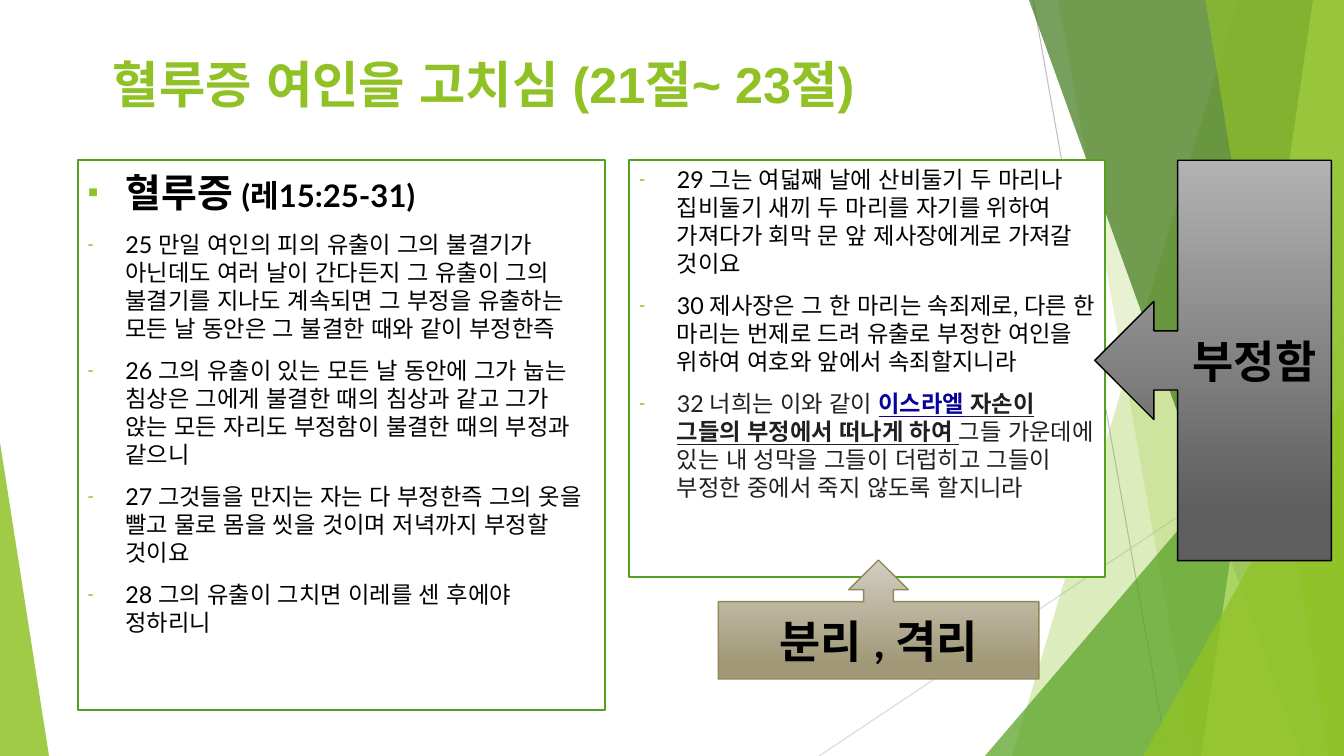
from lxml import etree
from pptx import Presentation
from pptx.dml.color import RGBColor
from pptx.enum import lang, shapes, text
from pptx.oxml.ns import qn
from pptx.util import Pt

LIME = RGBColor(0x90, 0xC2, 0x26)
GREEN = RGBColor(0x54, 0xA0, 0x21)
DARK_GREEN = RGBColor(0x3F, 0x78, 0x19)
PALE_LIME = RGBColor(0xC0, 0xE4, 0x74)
GREY = RGBColor(0xBF, 0xBF, 0xBF)
LIGHT_GREY = RGBColor(0xD9, 0xD9, 0xD9)
WHITE = RGBColor(0xFF, 0xFF, 0xFF)
BLACK = RGBColor(0, 0, 0)
INK = RGBColor(0x20, 0x20, 0x20)
NAVY = RGBColor(0x07, 0x00, 0x9A)
SILVER = RGBColor(0xB2, 0xB2, 0xB2)
CHARCOAL = RGBColor(0x5E, 0x5E, 0x5E)
SAND = RGBColor(0xD1, 0xCD, 0xC0)
KHAKI = RGBColor(0xA1, 0x98, 0x77)
BROWN = RGBColor(0x91, 0x86, 0x55)
WIDTH, HEIGHT = 960, 540
KOREAN_FONT = "Noto Sans CJK KR"


def add_text(paragraph, words, size=16.6, color=BLACK, bold=False, underline=False, latin="Lato"):
    run = paragraph.add_run()
    run.text = words
    font = run.font
    font.size, font.bold, font.underline, font.name = Pt(size), bold, underline, latin
    font.color.rgb = color
    font.language_id = lang.MSO_LANGUAGE_ID.KOREAN
    east_asian = etree.SubElement(run._r.get_or_add_rPr(), qn("a:ea"))
    east_asian.set("typeface", KOREAN_FONT)


def add_bullet(paragraph, mark):
    properties = paragraph._p.get_or_add_pPr()
    properties.set("marL", str(Pt(27)))
    properties.set("indent", str(-Pt(27)))
    color = etree.SubElement(properties, qn("a:buClr"))
    etree.SubElement(color, qn("a:srgbClr")).set("val", str(LIME))
    etree.SubElement(properties, qn("a:buSzPct")).set("val", "80000")
    etree.SubElement(properties, qn("a:buFont")).set("typeface", "Arial")
    etree.SubElement(properties, qn("a:buChar")).set("char", mark)


presentation = Presentation()
presentation.slide_width, presentation.slide_height = Pt(WIDTH), Pt(HEIGHT)
slide = presentation.slides.add_slide(presentation.slide_layouts[5])

# Thin background lines
for x1, y1, x2, y2, color in [(738, 0, 834, HEIGHT, GREY), (WIDTH, 290, 585, HEIGHT, LIGHT_GREY)]:
    line = slide.shapes.add_connector(shapes.MSO_CONNECTOR.STRAIGHT, Pt(x1), Pt(y1), Pt(x2), Pt(y2))
    line.line.color.rgb = color
    line.line.width = Pt(0.75)
    etree.SubElement(line._element.spPr, qn("a:effectLst"))

# Translucent facets, back to front: bands give the top and bottom x of their
# slanted edge, triangles give left, top and apex position
facets = [
    ("band", (884, 723), LIME, 30),
    ("band", (756, 852), LIME, 20),
    ("triangle", (703.5, 240, 1), GREEN, 72),
    ("band", (735, 929.5), DARK_GREEN, 70),
    ("band", (938, 858), PALE_LIME, 70),
    ("band", (861, 949), LIME, 65),
    ("triangle", (816.5, 283, 1), LIME, 80),
    ("triangle", (0, 316, 0), LIME, 85),
]
for kind, geometry, color, opacity in facets:
    if kind == "band":
        top_x, bottom_x = geometry
        builder = slide.shapes.build_freeform(Pt(top_x), 0)
        corners = [(WIDTH, 0), (WIDTH, HEIGHT), (bottom_x, HEIGHT)]
        builder.add_line_segments([(Pt(x), Pt(y)) for x, y in corners], close=True)
        facet = builder.convert_to_shape()
    else:
        left, top, apex = geometry
        width = WIDTH - left if apex else 35
        facet = slide.shapes.add_shape(
            shapes.MSO_SHAPE.ISOSCELES_TRIANGLE, Pt(left), Pt(top), Pt(width), Pt(HEIGHT - top))
        facet.adjustments[0] = apex
    facet.shadow.inherit = False
    facet.line.fill.background()
    facet.fill.solid()
    facet.fill.fore_color.rgb = color
    fill_color = next(facet._element.spPr.iter(qn("a:srgbClr")))
    etree.SubElement(fill_color, qn("a:alpha")).set("val", str(opacity * 1000))

# Title
title = slide.shapes.title
title.left, title.top, title.width, title.height = Pt(73.5), Pt(34), Pt(764), Pt(65)
title.text_frame.vertical_anchor = text.MSO_ANCHOR.TOP
title.text_frame.auto_size = text.MSO_AUTO_SIZE.NONE
heading = title.text_frame.paragraphs[0]
heading.alignment = text.PP_ALIGN.LEFT
add_text(heading, "혈루증 여인을 고치심 ", size=36, color=LIME, bold=True)
add_text(heading, "(21절~ 23절)", size=36, color=LIME, bold=True, latin="Arial")

# Verse boxes: each paragraph is a list of runs with their formats
left_verses = [
    [("혈루증", dict(size=27.8, bold=True)), (" (레15:25-31)", dict(size=22.2, bold=True))],
    [("25 만일 여인의 피의 유출이 그의 불결기가 아닌데도 여러 날이 간다든지 그 유출이 그의 "
      "불결기를 지나도 계속되면 그 부정을 유출하는 모든 날 동안은 그 불결한 때와 같이 부정한즉", {})],
    [("26 그의 유출이 있는 모든 날 동안에 그가 눕는 침상은 그에게 불결한 때의 침상과 같고 "
      "그가 앉는 모든 자리도 부정함이 불결한 때의 부정과 같으니", {})],
    [("27 그것들을 만지는 자는 다 부정한즉 그의 옷을 빨고 물로 몸을 씻을 것이며 "
      "저녁까지 부정할 것이요", {})],
    [("28 그의 유출이 그치면 이레를 센 후에야 정하리니", {})],
]
right_verses = [
    [("29 그는 여덟째 날에 산비둘기 두 마리나 집비둘기 새끼 두 마리를 자기를 위하여 "
      "가져다가 회막 문 앞 제사장에게로 가져갈 것이요", {})],
    [("30 제사장은 그 한 마리는 속죄제로, 다른 한 마리는 번제로 드려 유출로 부정한 "
      "여인을 위하여 여호와 앞에서 속죄할지니라", {})],
    [("32 너희는 이와 같이 ", dict(color=INK)),
     ("이스라엘", dict(color=NAVY, bold=True, underline=True)),
     (" 자손이 그들의 부정에서 떠나게 하여 ", dict(color=INK, bold=True, underline=True)),
     ("그들 가운데에 있는 내 성막을 그들이 더럽히고 그들이 부정한 중에서 죽지 않도록 할지니라",
      dict(color=INK))],
]
for left, width, height, verses in [(55.5, 376.5, 392.5, left_verses), (449.5, 340, 297.5, right_verses)]:
    box = slide.shapes.add_shape(
        shapes.MSO_SHAPE.RECTANGLE, Pt(left), Pt(114.5), Pt(width), Pt(height))
    box.shadow.inherit = False
    box.fill.solid()
    box.fill.fore_color.rgb = WHITE
    box.line.color.rgb = GREEN
    box.line.width = Pt(1.5)
    frame = box.text_frame
    frame.word_wrap = True
    frame.vertical_anchor = text.MSO_ANCHOR.TOP
    for index, runs in enumerate(verses):
        paragraph = frame.paragraphs[0] if index == 0 else frame.add_paragraph()
        is_heading = "size" in runs[0][1]
        paragraph.alignment = text.PP_ALIGN.LEFT
        paragraph.space_before = Pt(10)
        paragraph.line_spacing = Pt(36 if is_heading else 20)
        add_bullet(paragraph, "▪" if is_heading else "-")
        for words, style in runs:
            add_text(paragraph, words, **style)

# Arrow callouts
callouts = [
    (shapes.MSO_SHAPE.LEFT_ARROW_CALLOUT, (782, 114.5, 169, 286), SILVER, CHARCOAL, BLACK, "부정함 "),
    (shapes.MSO_SHAPE.UP_ARROW_CALLOUT, (513, 400, 229, 85), SAND, KHAKI, BROWN, "분리 , 격리"),
]
for preset, bounds, upper, lower, outline, words in callouts:
    callout = slide.shapes.add_shape(preset, *[Pt(value) for value in bounds])
    callout.shadow.inherit = False
    callout.fill.gradient()
    callout.fill.gradient_angle = 270
    for stop, position, color in zip(callout.fill.gradient_stops, (0, 0.88), (upper, lower)):
        stop.position = position
        stop.color.rgb = color
    callout.line.color.rgb = outline
    callout.line.width = Pt(1)
    callout.text_frame.word_wrap = True
    callout.text_frame.vertical_anchor = text.MSO_ANCHOR.MIDDLE
    label = callout.text_frame.paragraphs[0]
    label.alignment = text.PP_ALIGN.CENTER
    add_text(label, words, size=32, bold=True)

presentation.save("out.pptx")
